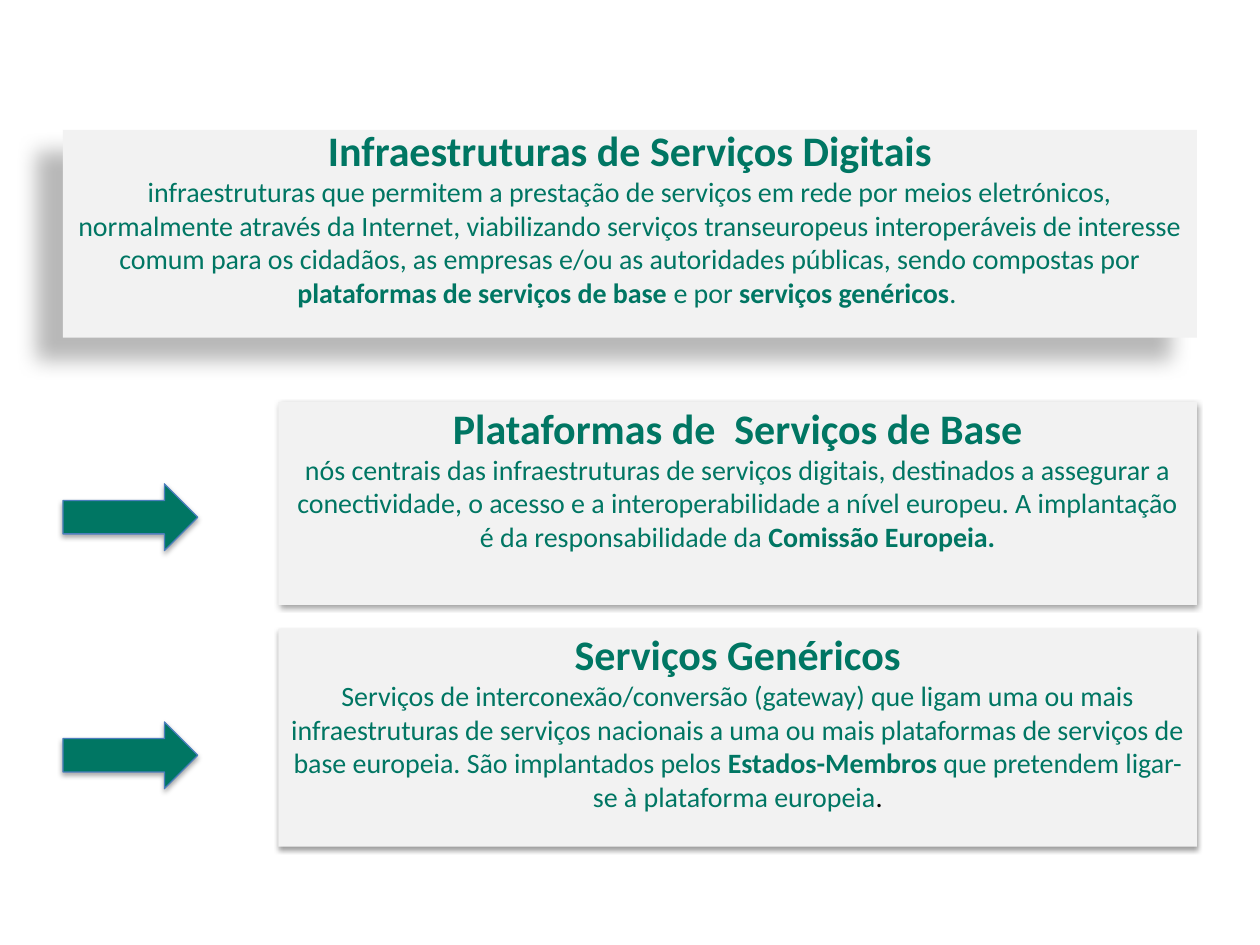
from pptx import Presentation
from pptx.dml.color import RGBColor
from pptx.enum.shapes import MSO_SHAPE
from pptx.enum.text import MSO_ANCHOR, PP_ALIGN
from pptx.oxml.ns import qn
from pptx.oxml.xmlchemy import OxmlElement
from pptx.util import Inches, Pt

RECTANGLE = MSO_SHAPE.RECTANGLE
RIGHT_ARROW = MSO_SHAPE.RIGHT_ARROW
MIDDLE = MSO_ANCHOR.MIDDLE
CENTER = PP_ALIGN.CENTER

COLORS = {"green": "007663", "panel": "F2F2F2", "edge": "4B7EBC", "black": "000000"}

# Opacity in percent, blur and distance in points, direction in degrees
PANEL_SHADOW = (28, 11.8, 19.7, 141)
CARD_SHADOW = (38, 3.1, 1.6, 90)
ARROW_SHADOW = (35, 3.1, 1.8, 90)


def color(name):
    return RGBColor.from_string(COLORS[name])


class SlideBuilder:
    """Holds the style and the slide; lengths are grid columns and rows."""

    font = "Calibri"
    heading_size = 24
    body_size = 16
    columns, rows = 20, 15

    def __init__(self, presentation):
        self.slide = presentation.slides.add_slide(presentation.slide_layouts[6])
        self.column = presentation.slide_width / self.columns
        self.row = presentation.slide_height / self.rows

    def block(self, kind, left, top, width, height, fill, shadow):
        shape = self.slide.shapes.add_shape(
            kind, round(left * self.column), round(top * self.row),
            round(width * self.column), round(height * self.row))
        shape.fill.solid()
        shape.fill.fore_color.rgb = color(fill)
        shape.line.fill.background()
        self.cast_shadow(shape, *shadow)
        return shape

    def cast_shadow(self, shape, opacity, blur, distance, direction):
        shape.shadow.inherit = False
        outer = OxmlElement("a:outerShdw")
        outer.set("blurRad", str(Pt(blur)))
        outer.set("dist", str(Pt(distance)))
        outer.set("dir", str(direction * 60000))
        outer.set("algn", "ctr")
        outer.set("rotWithShape", "0")
        tint = OxmlElement("a:srgbClr")
        tint.set("val", COLORS["black"])
        alpha = OxmlElement("a:alpha")
        alpha.set("val", str(opacity * 1000))
        tint.append(alpha)
        outer.append(tint)
        shape._element.spPr.find(qn("a:effectLst")).append(outer)

    def run(self, paragraph, text, size, bold, ink="green"):
        run = paragraph.add_run()
        run.text = text
        run.font.name = self.font
        run.font.size = Pt(size)
        run.font.bold = bold
        run.font.color.rgb = color(ink)

    def card(self, left, top, width, height, shadow, bottom_margin, heading, body):
        shape = self.block(RECTANGLE, left, top, width, height, "panel", shadow)
        frame = shape.text_frame
        frame.word_wrap = True
        frame.vertical_anchor = MIDDLE
        frame.margin_top = 0
        frame.margin_bottom = round(bottom_margin * self.row)
        title = frame.paragraphs[0]
        self.run(title, heading, self.heading_size, True)
        description = frame.add_paragraph()
        for text, bold, *ink in body:
            self.run(description, text, self.body_size, bold, *ink)
        for paragraph in frame.paragraphs:
            paragraph.alignment = CENTER

    def arrow(self, left, top, width, height):
        shape = self.block(RIGHT_ARROW, left, top, width, height, "green", ARROW_SHADOW)
        shape.line.color.rgb = color("edge")
        shape.line.width = Pt(0.75)


def main():
    presentation = Presentation()
    presentation.slide_width = Inches(10)
    presentation.slide_height = Inches(7.5)
    builder = SlideBuilder(presentation)

    # Definition panel across the slide
    builder.card(
        1, 2.06, 18, 3.3, PANEL_SHADOW, 0.54, "Infraestruturas de Serviços Digitais",
        [("infraestruturas que permitem a prestação de serviços em rede por meios "
          "eletrónicos, normalmente através da Internet, viabilizando serviços "
          "transeuropeus interoperáveis de interesse comum para os cidadãos, as "
          "empresas e/ou as autoridades públicas, sendo compostas por ", False),
         ("plataformas de serviços de base ", True),
         ("e por ", False),
         ("serviços genéricos", True),
         (". ", False)])

    # The two components: top, height, bottom margin, arrow top, heading, body
    components = [
        (6.38, 3.22, 0.82, 7.68, "Plataformas de  Serviços de Base",
         [("nós centrais das infraestruturas de serviços digitais, destinados a "
           "assegurar a conectividade, o acesso e a interoperabilidade a nível "
           "europeu. A implantação é da responsabilidade da ", False),
          ("Comissão Europeia.", True)]),
        (9.98, 3.46, 0.54, 11.46, "Serviços Genéricos",
         [("Serviços de interconexão/conversão (gateway) que ligam uma ou mais "
           "infraestruturas de serviços nacionais a uma ou mais plataformas de "
           "serviços de base europeia. São implantados pelos ", False),
          ("Estados-Membros", True),
          (" que pretendem ligar-se à plataforma europeia", False),
          (".", False, "black")]),
    ]
    for top, height, bottom_margin, arrow_top, heading, body in components:
        builder.card(4.42, top, 14.58, height, CARD_SHADOW, bottom_margin, heading, body)
        builder.arrow(1, arrow_top, 2.14, 1.06)

    presentation.save("out.pptx")


if __name__ == "__main__":
    main()
